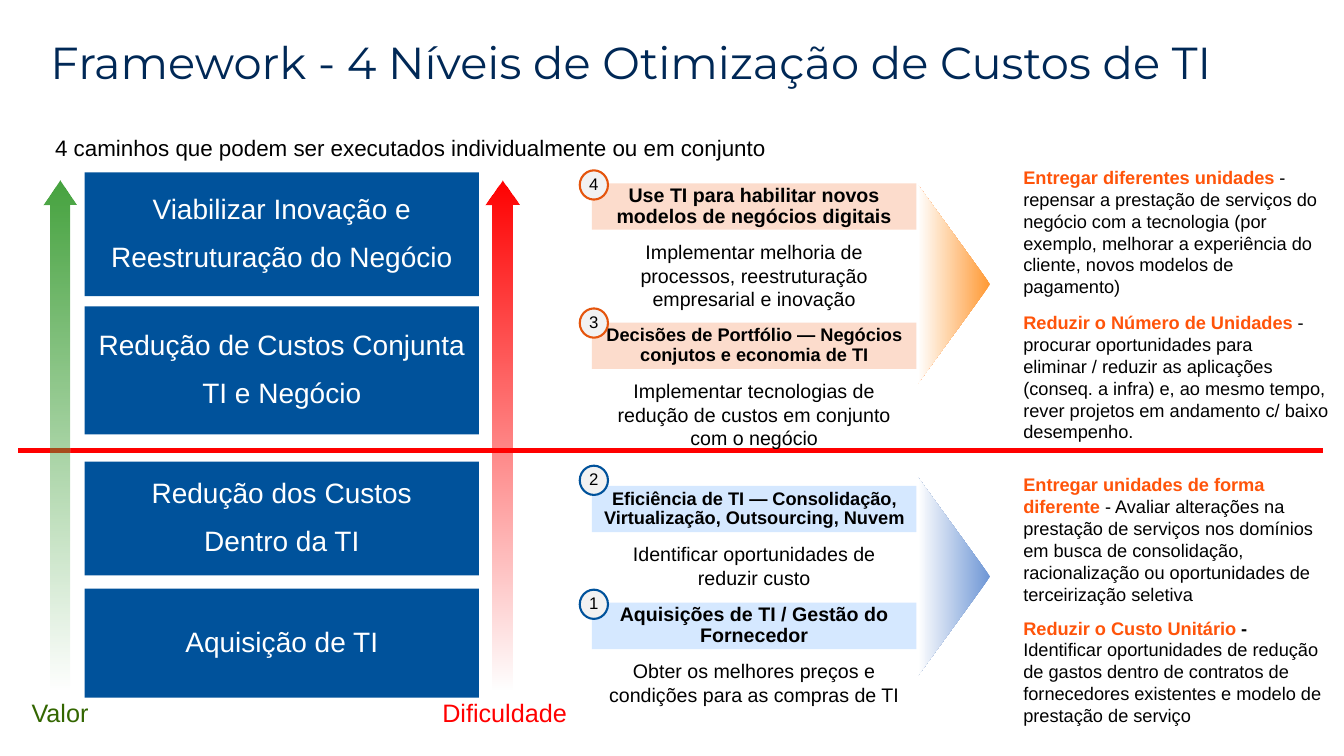
import lxml.etree
import pptx
import pptx.util
import pptx.dml.color
import pptx.enum.shapes
import pptx.enum.text
import pptx.oxml.ns
from dataclasses import dataclass

Inches, Pt = pptx.util.Inches, pptx.util.Pt
SHAPE = pptx.enum.shapes.MSO_SHAPE
ALIGN = pptx.enum.text.PP_ALIGN
ANCHOR = pptx.enum.text.MSO_ANCHOR
qn = pptx.oxml.ns.qn


@dataclass(frozen=True)
class Theme:
    title_font: str = "Montserrat"
    font: str = "Arial"
    navy: str = "002856"
    blue: str = "00529B"
    pale_blue: str = "D5E8FF"
    mid_blue: str = "6E96D5"
    orange: str = "E5550D"
    pale_orange: str = "FCDCCC"
    mid_orange: str = "FF9933"
    accent: str = "FF540A"
    green: str = "46A33F"
    dark_green: str = "336600"
    red: str = "FF0000"
    grey: str = "F2F2F2"
    black: str = "000000"
    white: str = "FFFFFF"
    title: int = 32
    level: int = 20
    label: int = 18
    lead: int = 16
    body: int = 14
    note: int = 13
    badge: int = 12


T = Theme()

# Top, height and lines of each level box
LEVELS = [
    (1.71, 1.23, ["Viabilizar Inovação e", "Reestruturação do Negócio"]),
    (3.04, 1.27, ["Redução de Custos Conjunta", "TI e Negócio"]),
    (4.58, 1.13, ["Redução dos Custos", "Dentro da TI"]),
    (5.84, 1.08, ["Aquisição de TI"]),
]
# Number, band top, badge top, heading size, heading, description
BUSINESS_ACTIONS = [
    ("4", 1.82, 1.69, T.body, "Use TI para habilitar novos modelos de negócios digitais",
     "Implementar melhoria de processos, reestruturação empresarial e inovação"),
    ("3", 3.2, 3.06, T.note, "Decisões de Portfólio — Negócios conjutos e economia de TI",
     "Implementar tecnologias de redução de custos em conjunto com o negócio"),
]
IT_ACTIONS = [
    ("2", 4.82, 4.62, T.note, "Eficiência de TI — Consolidação, Virtualização, Outsourcing, Nuvem",
     "Identificar oportunidades de reduzir custo"),
    ("1", 5.98, 5.85, T.body, "Aquisições de TI / Gestão do Fornecedor",
     "Obter os melhores preços e condições para as compras de TI"),
]
# Top, height, lead words, bold dash, explanation
NOTES = [
    (1.6, 1.41, "Entregar diferentes unidades ", "",
     "- repensar a prestação de serviços do negócio com a tecnologia (por exemplo, "
     "melhorar a experiência do cliente, novos modelos de pagamento)"),
    (3.04, 1.41, "Reduzir o Número de Unidades ", "",
     "- procurar oportunidades para eliminar / reduzir as aplicações (conseq. a infra) e, "
     "ao mesmo tempo, rever projetos em andamento c/ baixo desempenho."),
    (4.65, 1.41, "Entregar unidades de forma diferente ", "",
     "- Avaliar alterações na prestação de serviços nos domínios em busca de consolidação, "
     "racionalização ou oportunidades de terceirização seletiva"),
    (6.07, 1.19, "Reduzir o Custo Unitário", " - ",
     "Identificar oportunidades de redução de gastos dentro de contratos de fornecedores "
     "existentes e modelo de prestação de serviço"),
]


def rgb(color):
    return pptx.dml.color.RGBColor.from_string(color)


def frame(sp, insets, anchor=ANCHOR.TOP, wrap=True):
    tf = sp.text_frame
    tf.word_wrap = wrap
    tf.vertical_anchor = anchor
    tf.margin_left, tf.margin_top, tf.margin_right, tf.margin_bottom = map(Inches, insets)
    return tf


def add_run(p, text, size, color, bold=False, font=T.font):
    r = p.add_run()
    r.text = text
    r.font.name, r.font.size, r.font.bold = font, Pt(size), bold
    r.font.color.rgb = rgb(color)


def write(tf, lines, size, color, bold=False, align=ALIGN.CENTER, spacing=0.9, gap=0):
    for i, line in enumerate(lines):
        p = tf.add_paragraph() if i else tf.paragraphs[0]
        p.alignment, p.line_spacing = align, spacing
        p.space_before = Pt(gap if i else 0)
        add_run(p, line, size, color, bold)


def add_box(s, kind, x, y, w, h, fill=None, line=None):
    sp = s.shapes.add_shape(kind, Inches(x), Inches(y), Inches(w), Inches(h))
    sp.shadow.inherit = False
    if fill:
        sp.fill.solid()
        sp.fill.fore_color.rgb = rgb(fill)
    if line:
        sp.line.color.rgb = rgb(line)
        sp.line.width = Pt(1.5)
    else:
        sp.line.fill.background()
    return sp


def add_text(s, x, y, w, h, insets, wrap=True):
    sp = s.shapes.add_textbox(Inches(x), Inches(y), Inches(w), Inches(h))
    return frame(sp, insets, wrap=wrap)


def fade(sp, start, end, clear=False):
    sp.fill.gradient()
    sp.fill.gradient_angle = 270
    stops = sp.fill.gradient_stops
    for stop, color, position in zip(stops, (start, end), (0, 1)):
        stop.color.rgb = rgb(color)
        stop.position = position
    if clear:
        last = sp._element.spPr.findall(".//" + qn("a:gs"))[-1]
        lxml.etree.SubElement(last.find(qn("a:srgbClr")), qn("a:alpha")).set("val", "0")


def heading(s, x, y, w, h):
    sp = s.shapes.title
    sp.left, sp.top, sp.width, sp.height = map(Inches, (x, y, w, h))
    p = frame(sp, (0, 0, 0, 0)).paragraphs[0]
    p.alignment, p.line_spacing = ALIGN.LEFT, 0.9
    add_run(p, "Framework - 4 Níveis de Otimização de Custos de TI",
            T.title, T.navy, font=T.title_font)
    tf = add_text(s, x - 0.27, y + 0.88, 7.78, 0.37, (0, 0.05, 0.1, 0.05))
    write(tf, ["4 caminhos que podem ser executados individualmente ou em conjunto"],
          T.lead, T.black, spacing=1)


def divider(s, x, y, w):
    ln = s.shapes.add_connector(pptx.enum.shapes.MSO_CONNECTOR.STRAIGHT,
                                Inches(x), Inches(y), Inches(x + w), Inches(y))
    ln.line.color.rgb = rgb(T.red)
    ln.line.width = Pt(3.5)
    lxml.etree.SubElement(ln._element.spPr, qn("a:effectLst"))


def actions(s, x, w, items, band, ring):
    for number, top, badge_top, size, title, text in items:
        sp = add_box(s, SHAPE.RECTANGLE, x, top, w, 0.46, band)
        write(frame(sp, (0.1, 0, 0.1, 0), ANCHOR.MIDDLE), [title], size, T.black, bold=True)
        tf = add_text(s, x, top + 0.46, w, 0.58, (0.1, 0.1, 0.1, 0))
        write(tf, [text], T.body, T.black, spacing=1)
        sp = add_box(s, SHAPE.OVAL, x - 0.12, badge_top, 0.28, 0.29, T.grey, ring)
        write(frame(sp, (0.05,) * 4, ANCHOR.MIDDLE, wrap=False), [number], T.badge, T.black)


def pointer(s, x, y, w, h, color):
    # The triangle turns a quarter about its centre to fill the given box
    sp = add_box(s, SHAPE.ISOSCELES_TRIANGLE, x + (w - h) / 2, y + (h - w) / 2, h, w)
    sp.rotation = 90
    fade(sp, color, T.white)


def notes_column(s, x, w):
    for top, h, lead, dash, text in NOTES:
        p = add_text(s, x, top, w, h, (0.13, 0.05, 0.1, 0.05)).paragraphs[0]
        add_run(p, lead, T.note, T.accent, bold=True)
        if dash:
            add_run(p, dash, T.note, T.black, bold=True)
        add_run(p, text, T.note, T.black)


def levels(s, x, w):
    for top, h, lines in LEVELS:
        sp = add_box(s, SHAPE.RECTANGLE, x, top, w, h, T.blue)
        tf = frame(sp, (0.1, 0.05, 0.1, 0.05), ANCHOR.MIDDLE, wrap=False)
        write(tf, lines, T.level, T.white, gap=13)


def scale_arrow(s, x, y, w, h, color, label, label_x, label_w, label_color):
    sp = add_box(s, SHAPE.UP_ARROW, x, y, w, h)
    sp.adjustments[0], sp.adjustments[1] = 0.59, 0.75
    fade(sp, color, color, clear=True)
    tf = add_text(s, label_x, y + h - 0.01, label_w, 0.47, (0.1,) * 4, wrap=False)
    write(tf, [label], T.label, label_color)


def main():
    prs = pptx.Presentation()
    prs.slide_width, prs.slide_height = Inches(13.33), Inches(7.5)
    s = prs.slides.add_slide(prs.slide_layouts[5])
    heading(s, 0.5, 0.4, 12.94, 0.48)
    divider(s, 0.18, 4.47, 12.94)
    # Pointers and the actions beside them
    pointer(s, 9.1, 1.83, 0.72, 1.98, T.mid_orange)
    pointer(s, 9.1, 4.73, 0.72, 1.98, T.mid_blue)
    actions(s, 5.87, 3.22, BUSINESS_ACTIONS, T.pale_orange, T.orange)
    actions(s, 5.87, 3.22, IT_ACTIONS, T.pale_blue, T.blue)
    notes_column(s, 10.02, 3.26)
    # Levels between the value and difficulty scales
    levels(s, 0.84, 3.91)
    scale_arrow(s, 0.43, 1.79, 0.33, 5.07, T.green, "Valor", 0.2, 0.79, T.dark_green)
    scale_arrow(s, 4.82, 1.79, 0.33, 5.07, T.red, "Dificuldade", 4.28, 1.45, T.red)
    prs.save("out.pptx")


if __name__ == "__main__":
    main()
